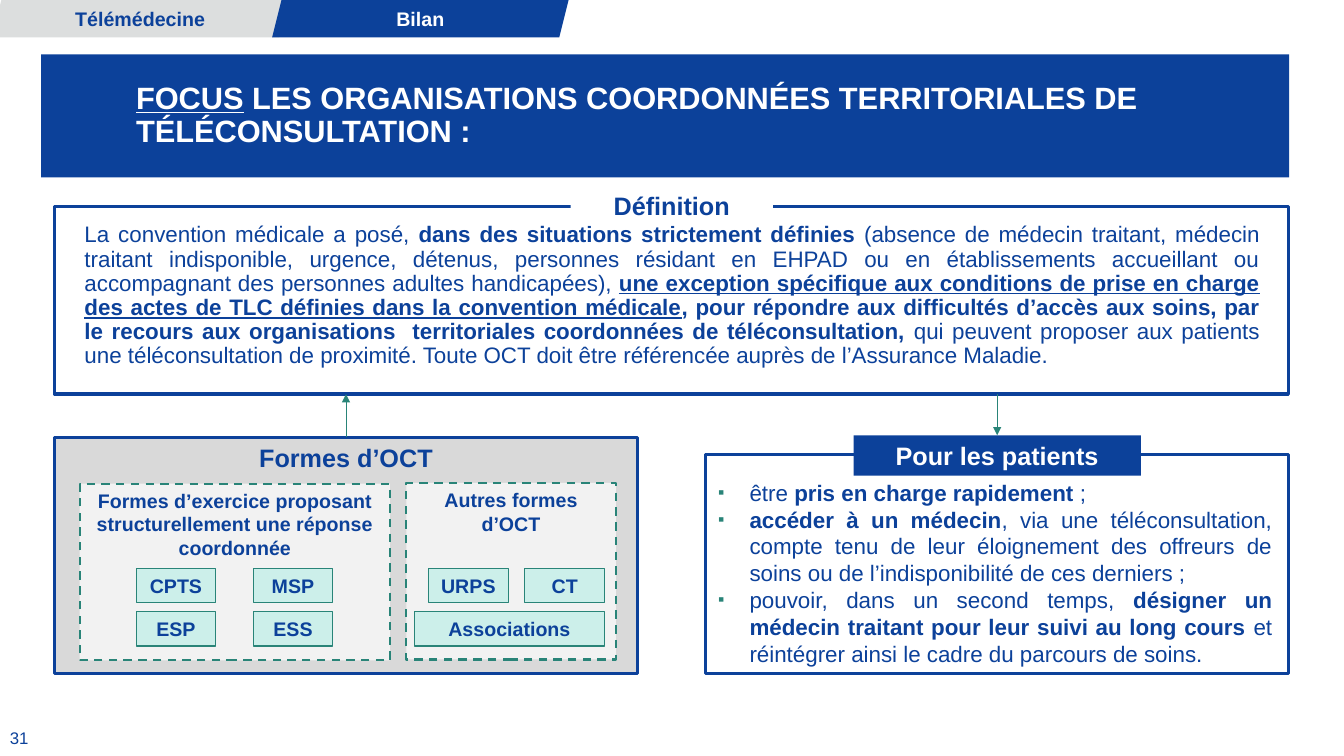
from lxml import etree
from pptx import Presentation
from pptx.dml.color import RGBColor
from pptx.enum import dml, shapes, text
from pptx.oxml import ns
from pptx.util import Cm, Pt

BLUE = RGBColor(0x0C, 0x41, 0x9A)
GREEN = RGBColor(0x29, 0x84, 0x78)
MINT = RGBColor(0xCC, 0xEF, 0xEA)
PALE = RGBColor(0xF2, 0xF2, 0xF2)
GREY = RGBColor(0xD9, 0xD9, 0xD9)
TAB_GREY = RGBColor(0xDC, 0xDE, 0xDE)
WHITE = RGBColor(0xFF, 0xFF, 0xFF)

# A paragraph is a list of (text, style); style holds "b" for bold, "u" for underline.
TABS = [("Télémédecine", TAB_GREY, BLUE), ("Bilan", BLUE, WHITE)]
TITLE = [
    ("FOCUS", "bu"),
    (" LES ORGANISATIONS COORDONNÉES TERRITORIALES DE TÉLÉCONSULTATION :", "b"),
]
DEFINITION = [
    ("La convention médicale a posé, ", ""),
    ("dans des situations strictement définies ", "b"),
    ("(absence de médecin traitant, médecin traitant indisponible, urgence, détenus, "
     "personnes résidant en EHPAD ou en établissements accueillant ou accompagnant "
     "des personnes adultes handicapées), ", ""),
    ("une exception spécifique aux conditions de prise en charge des actes de TLC "
     "définies dans la convention médicale", "bu"),
    (", pour répondre aux difficultés d’accès aux soins, par le recours aux "
     "organisations  territoriales coordonnées de téléconsultation,", "b"),
    (" qui peuvent proposer aux patients une téléconsultation de proximité. "
     "Toute OCT doit être référencée auprès de l’Assurance Maladie.", ""),
]
BENEFITS = [
    [("être ", ""), ("pris en charge rapidement", "b"), (" ;", "")],
    [("accéder à un médecin", "b"),
     (", via une téléconsultation, compte tenu de leur éloignement des offreurs de "
      "soins ou de l’indisponibilité de ces derniers ;", "")],
    [("pouvoir, dans un second temps, ", ""),
     ("désigner un médecin traitant pour leur suivi au long cours ", "b"),
     ("et réintégrer ainsi le cadre du parcours de soins.", "")],
]
PANELS = [  # text, left, top, width
    ("Formes d’exercice proposant structurellement une réponse coordonnée",
     2.01, 12.19, 7.82),
    ("Autres formes d’OCT", 10.24, 12.17, 5.28),
]
CHIP_ROWS = [  # top, then (text, left, width)
    (14.33, [("CPTS", 3.43, 2.01), ("MSP", 6.38, 2.01),
             ("URPS", 10.8, 2.01), ("CT", 13.23, 2.01)]),
    (15.42, [("ESP", 3.43, 2.01), ("ESS", 6.38, 2.01), ("Associations", 10.44, 4.8)]),
]
FRAME_LEFT, FRAME_WIDTH = 1.37, 31.1
HALF_WIDTH = 14.7
DEFINITION_TOP, DEFINITION_HEIGHT = 5.21, 4.72
DEFINITION_BOTTOM = DEFINITION_TOP + DEFINITION_HEIGHT
TAB_WIDTH, TAB_STEP = 7.47, 7.06

deck = Presentation()
deck.slide_width, deck.slide_height = Cm(33.87), Cm(19.05)
page = deck.slides.add_slide(deck.slide_layouts[6])


def write(box, paragraphs, size, color=BLUE, align=text.PP_ALIGN.LEFT,
          anchor=text.MSO_ANCHOR.TOP, spacing=None, bulleted=False):
    frame = box.text_frame
    frame.word_wrap = True
    frame.vertical_anchor = anchor
    for index, spans in enumerate(paragraphs):
        para = frame.add_paragraph() if index else frame.paragraphs[0]
        para.alignment = align
        if spacing:
            para.line_spacing = spacing
        if bulleted:
            add_bullet(para)
        para.font.name, para.font.size = "Arial", Pt(size)
        para.font.color.rgb = color
        all_bold = all("b" in style for _, style in spans)
        if all_bold:
            para.font.bold = True
        for words, style in spans:
            span = para.add_run()
            span.text = words
            if "b" in style and not all_bold:
                span.font.bold = True
            if "u" in style:
                span.font.underline = True


def add_bullet(para):
    para.level = 1
    props = para._p.get_or_add_pPr()
    props.set("marL", str(Cm(1.57)))
    props.set("indent", str(-Cm(0.79)))
    color = etree.SubElement(props, ns.qn("a:buClr"))
    etree.SubElement(color, ns.qn("a:srgbClr"), val=str(GREEN))
    etree.SubElement(props, ns.qn("a:buSzPct"), val="80000")
    etree.SubElement(props, ns.qn("a:buFont"), typeface="Arial")
    etree.SubElement(props, ns.qn("a:buChar"), char="▪")


def add_block(left, top, width, height, fill=None, line=None, weight=2.25,
              preset=shapes.MSO_SHAPE.RECTANGLE):
    box = page.shapes.add_shape(preset, Cm(left), Cm(top), Cm(width), Cm(height))
    box.shadow.inherit = False
    if fill is None:
        box.fill.background()
    else:
        box.fill.solid()
        box.fill.fore_color.rgb = fill
    if line is None:
        box.line.fill.background()
    else:
        box.line.color.rgb = line
        box.line.width = Pt(weight)
    return box


def add_text(left, top, width, height, paragraphs, size, **options):
    box = page.shapes.add_textbox(Cm(left), Cm(top), Cm(width), Cm(height))
    write(box, paragraphs, size, **options)


def label(box, words, size, color=BLUE, anchor=text.MSO_ANCHOR.TOP):
    """Centred bold text in a block."""
    write(box, [[(words, "b")]], size, color, text.PP_ALIGN.CENTER, anchor)


def add_arrow(x, start, end):
    arrow = page.shapes.add_connector(
        shapes.MSO_CONNECTOR.STRAIGHT, Cm(x), Cm(start), Cm(x), Cm(end))
    arrow.line.color.rgb = GREEN
    arrow.line.width = Pt(0.5)
    etree.SubElement(arrow.line._get_or_add_ln(), ns.qn("a:tailEnd"), type="triangle")
    etree.SubElement(arrow._element.spPr, ns.qn("a:effectLst"))
    return arrow


add_block(17.78, 11.46, HALF_WIDTH, 5.52, line=BLUE)

title = add_block(1.04, 1.37, 31.45, 3.1, fill=BLUE)
write(title, [TITLE], 22, WHITE, anchor=text.MSO_ANCHOR.MIDDLE, spacing=0.9)
title.text_frame.margin_left = Cm(2.39)
title.text_frame.margin_right = Cm(0.2)

add_text(0, 18.19, 2, 0.79, [[("31", "")]], 12, anchor=text.MSO_ANCHOR.MIDDLE)

add_text(1.88, 5.51, 30.12, 3.96, [DEFINITION], 16,
         align=text.PP_ALIGN.JUSTIFY, spacing=0.9)
add_block(FRAME_LEFT, DEFINITION_TOP, FRAME_WIDTH, DEFINITION_HEIGHT, line=BLUE)
label(add_block(14.38, 4.67, 5.1, 1.02, fill=WHITE), "Définition", 18)

forms = add_block(FRAME_LEFT, 11.02, HALF_WIDTH, 5.96, fill=GREY, line=BLUE)
label(forms, "Formes d’OCT", 18)
for words, left, top, width in PANELS:
    panel = add_block(left, top, width, 4.45, PALE, GREEN, 1.5)
    panel.line.dash_style = dml.MSO_LINE.DASH
    label(panel, words, 14)
for top, chips in CHIP_ROWS:
    for words, left, width in chips:
        label(add_block(left, top, width, 0.86, MINT, GREEN, 0.75), words, 14)

add_text(17.07, 11.94, 15.24, 5.05, BENEFITS, 16,
         align=text.PP_ALIGN.JUSTIFY, bulleted=True)
patients = add_block(21.51, 10.97, 7.24, 1.02, fill=BLUE)
label(patients, "Pour les patients", 18, WHITE)

add_arrow(8.72, 11.02, DEFINITION_BOTTOM).begin_connect(forms, 0)
add_arrow(25.13, DEFINITION_BOTTOM, 10.97).end_connect(patients, 0)

for index, (words, fill, color) in enumerate(TABS):
    tab = add_block(-0.2 + index * TAB_STEP, 0, TAB_WIDTH, 0.94, fill,
                    preset=shapes.MSO_SHAPE.PARALLELOGRAM)
    label(tab, words, 14, color, text.MSO_ANCHOR.MIDDLE)

deck.save("out.pptx")
